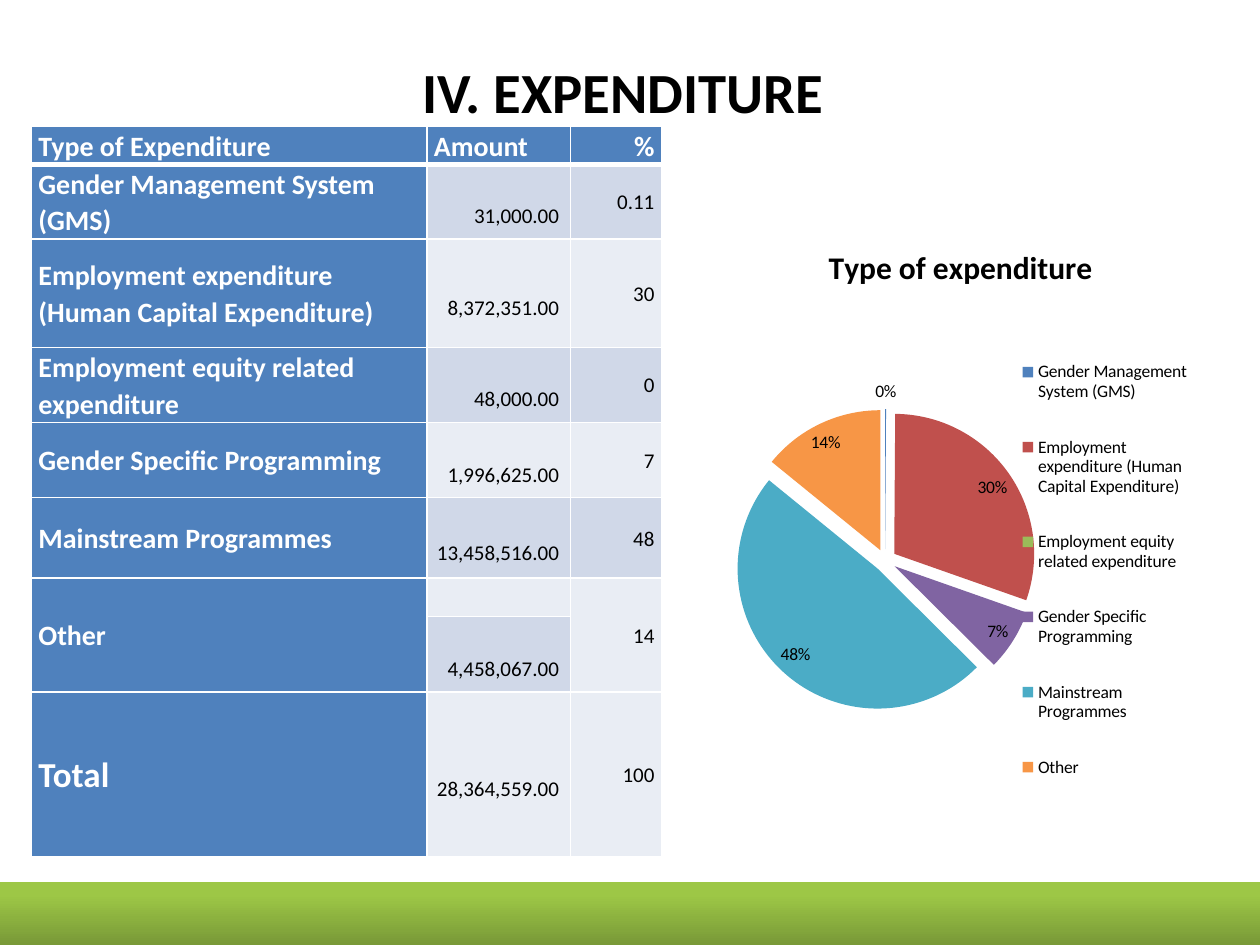
import lxml.etree
import pptx
import pptx.chart.data
import pptx.dml.color
import pptx.enum.chart
import pptx.enum.shapes
import pptx.enum.text
import pptx.oxml
import pptx.oxml.ns
import pptx.util

Pt = pptx.util.Pt
RGB = pptx.dml.color.RGBColor
ALIGN = pptx.enum.text.PP_ALIGN
MIDDLE = pptx.enum.text.MSO_ANCHOR.MIDDLE
qn = pptx.oxml.ns.qn

FONT = "Calibri"
BLACK = RGB(0, 0, 0)
WHITE = RGB(255, 255, 255)
BLUE = RGB(0x4F, 0x81, 0xBD)
DARK = RGB(0xD0, 0xD8, 0xE8)
LIGHT = RGB(0xE9, 0xED, 0xF4)
MOSS = RGB(0x77, 0x97, 0x37)
LIME = RGB(0x9D, 0xC7, 0x46)
SLICES = [BLUE, RGB(0xC0, 0x50, 0x4D), RGB(0x9B, 0xBB, 0x59),
          RGB(0x80, 0x64, 0xA2), RGB(0x4B, 0xAC, 0xC6), RGB(0xF7, 0x96, 0x46)]

HEADS = ["Type of Expenditure", "Amount", "%"]
ROWS = [
    ("Gender Management System (GMS)", "31,000.00", "0.11"),
    ("Employment expenditure (Human Capital Expenditure)", "8,372,351.00", "30"),
    ("Employment equity related expenditure", "48,000.00", "0"),
    ("Gender Specific Programming", "1,996,625.00", "7"),
    ("Mainstream Programmes", "13,458,516.00", "48"),
    ("Other", "", "14"),
    ("", "4,458,067.00", ""),
    ("Total", "28,364,559.00", "100"),
]
WIDTHS = [226, 82, 52]
HEIGHTS = [22, 42.5, 62, 43, 43, 46, 22, 43, 94]


def style(font, size, color, bold=False):
    font.name = FONT
    font.size = Pt(size)
    font.bold = bold
    font.color.rgb = color


def write(frame, text, size, color, bold, align):
    frame.text = text
    para = frame.paragraphs[0]
    para.alignment = align
    para.line_spacing = 1.07
    style(para.font, size, color, bold)
    for run in para.runs:
        style(run.font, size, color, bold)


def edge(cell, head):
    """White cell borders, with a thick rule below the header."""
    props = cell._tc.get_or_add_tcPr()
    for spot, side in enumerate("LRTB"):
        line = pptx.oxml.parse_xml(
            '<a:ln%s xmlns:a="%s" w="%d"><a:solidFill><a:srgbClr val="FFFFFF"/>'
            '</a:solidFill></a:ln%s>'
            % (side, pptx.oxml.ns.nsdecls("a").split('"')[1],
               Pt(3 if head and side == "B" else 1), side))
        props.insert(spot, line)


def fill_cell(cell, text, row, col):
    head = row == 0
    label = head or col == 0
    cell.vertical_anchor = MIDDLE
    cell.margin_left = cell.margin_right = Pt(4)
    cell.margin_top = cell.margin_bottom = 0
    if col == 1 and text and not head:
        # Amounts sit one line lower than the percentages
        cell.margin_left, cell.margin_right = Pt(2), Pt(6.5)
        cell.margin_top = Pt(16)
    size = 20 if text == "Total" else 16 if label else 12
    right = col == 2 or (col == 1 and not head)
    write(cell.text_frame, text, size, WHITE if label else BLACK, label,
          ALIGN.RIGHT if right else ALIGN.LEFT)
    cell.fill.solid()
    cell.fill.fore_color.rgb = BLUE if label else DARK if row % 2 else LIGHT
    edge(cell, head)


def add_title(slide):
    title = slide.shapes.title
    title.left, title.top, title.width, title.height = Pt(32), Pt(22), Pt(648), Pt(57)
    title.text_frame.vertical_anchor = MIDDLE
    write(title.text_frame, "IV. EXPENDITURE", 32.4, BLACK, True, ALIGN.CENTER)


def add_grid(slide):
    table = slide.shapes.add_table(len(HEIGHTS), len(WIDTHS), Pt(18), Pt(72),
                                   Pt(sum(WIDTHS)), Pt(sum(HEIGHTS))).table
    for column, width in zip(table.columns, WIDTHS):
        column.width = Pt(width)
    for line, height in zip(table.rows, HEIGHTS):
        line.height = Pt(height)
    for row, texts in enumerate([HEADS] + ROWS):
        for col, text in enumerate(texts):
            fill_cell(table.cell(row, col), text, row, col)
    # "Other" spans two rows beside its amount
    for col in (0, 2):
        table.cell(6, col).merge(table.cell(7, col))


def add_band(slide):
    band = slide.shapes.add_shape(pptx.enum.shapes.MSO_SHAPE.RECTANGLE,
                                  0, Pt(504), Pt(735), Pt(37))
    band.shadow.inherit = False
    band.line.fill.background()
    band.fill.gradient()
    band.fill.gradient_angle = 90
    for stop, color, place in zip(band.fill.gradient_stops, (MOSS, LIME), (0, 0.8)):
        stop.color.rgb = color
        stop.position = place


def lay_out(owner, spot, box, inner=False):
    """Give a chart part a fixed place, in fractions of the chart."""
    for old in owner.findall(qn("c:layout")):
        owner.remove(old)
    layout = lxml.etree.Element(qn("c:layout"))
    manual = lxml.etree.SubElement(layout, qn("c:manualLayout"))
    pairs = [("layoutTarget", "inner")] if inner else []
    pairs += [("xMode", "edge"), ("yMode", "edge")] + list(zip("xywh", box))
    for name, value in pairs:
        lxml.etree.SubElement(manual, qn("c:" + name)).set("val", str(value))
    owner.insert(spot, layout)


def add_pie(slide):
    data = pptx.chart.data.CategoryChartData()
    data.categories = [row[0] for row in ROWS if row[0] and row[0] != "Total"]
    data.add_series("Series 1", [0.11, 30, 0, 7, 48, 14])
    chart = slide.shapes.add_chart(pptx.enum.chart.XL_CHART_TYPE.PIE_EXPLODED,
                                   Pt(414), Pt(126), Pt(270), Pt(356.4), data).chart
    style(chart.font, 10, BLACK)

    # Heading and legend
    chart.has_title = True
    chart.chart_title.text_frame.text = "Type of expenditure"
    style(chart.chart_title.text_frame.paragraphs[0].runs[0].font, 18, BLACK, True)
    chart.has_legend = True
    chart.legend.position = pptx.enum.chart.XL_LEGEND_POSITION.RIGHT
    chart.legend.include_in_layout = False

    # Slices and labels
    plot = chart.plots[0]
    plot.vary_by_categories = True
    series = plot.series[0]
    for old in series._element.findall(qn("c:explosion")):
        old.set("val", "8")
    for spot, color in enumerate(SLICES):
        fill = series.points[spot].format.fill
        fill.solid()
        fill.fore_color.rgb = color
    plot.has_data_labels = True
    labels = plot.data_labels
    labels.show_percentage = True
    labels.show_value = False
    labels.number_format = "0%"
    labels.number_format_is_linked = False
    labels.position = pptx.enum.chart.XL_LABEL_POSITION.BEST_FIT
    style(labels.font, 10, BLACK)

    lay_out(plot._element.getparent(), 0, (0.02, 0.09, 0.64, 0.91), True)
    lay_out(chart.legend._element, 1, (0.64, 0.17, 0.36, 0.78))


def main():
    deck = pptx.Presentation()
    deck.slide_width, deck.slide_height = Pt(720), Pt(540)
    slide = deck.slides.add_slide(deck.slide_layouts[5])
    add_title(slide)
    add_grid(slide)
    add_band(slide)
    add_pie(slide)
    deck.save("out.pptx")


if __name__ == "__main__":
    main()
